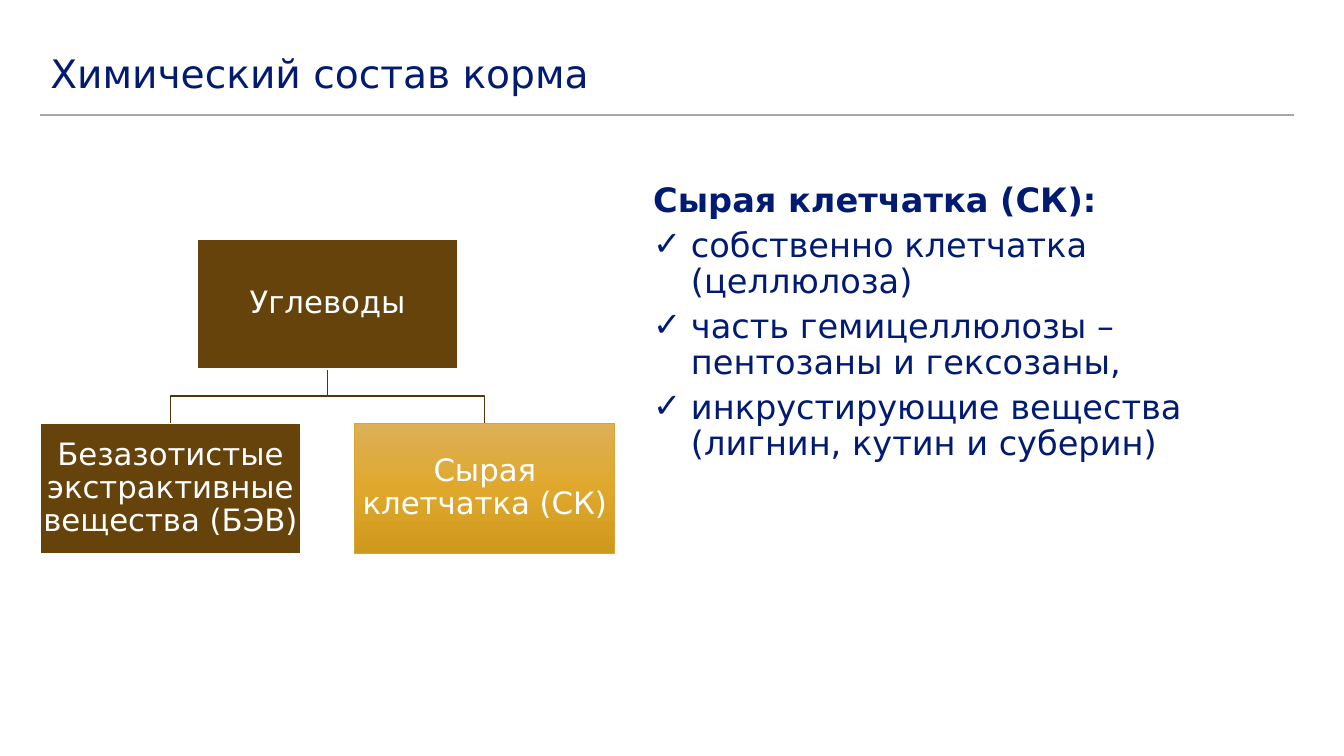
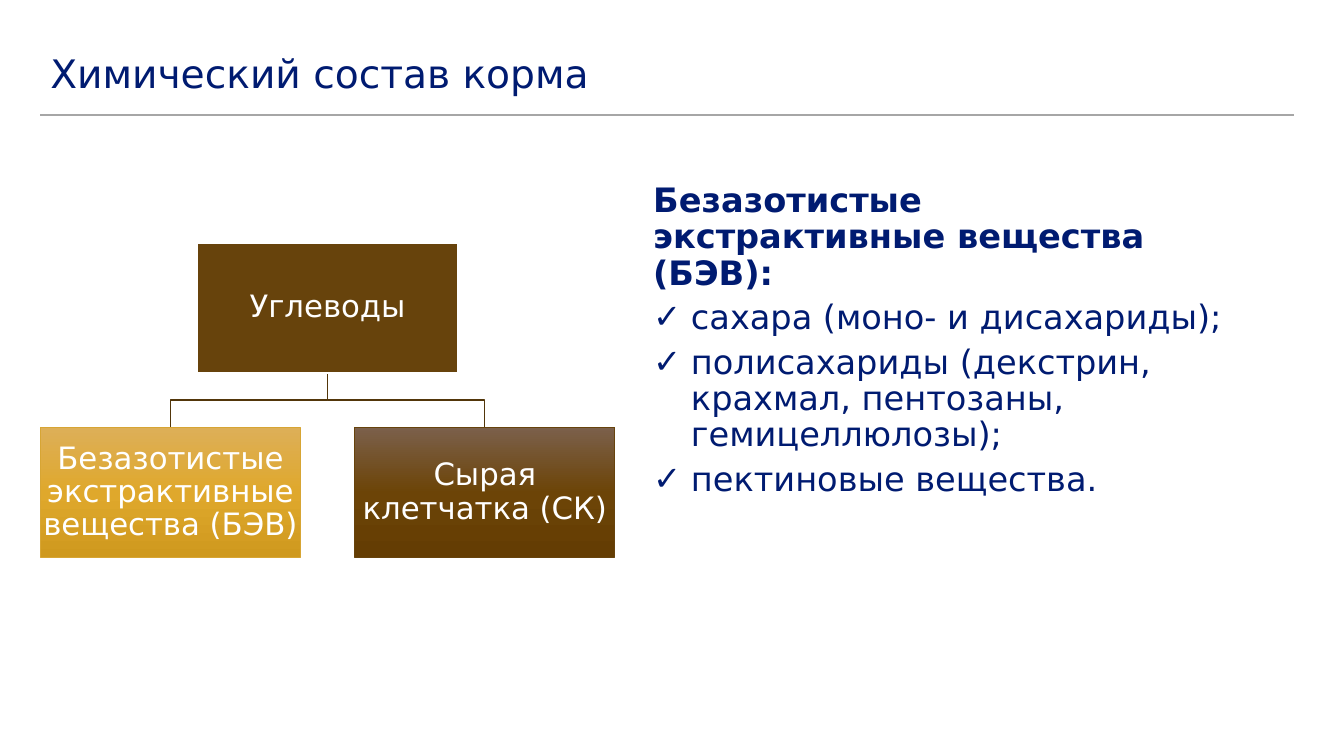
from copy import deepcopy
from lxml.etree import SubElement
from pptx import Presentation
from pptx.dml.color import RGBColor as RGB
from pptx.enum.shapes import MSO_CONNECTOR as LINK, MSO_SHAPE as SHAPE
from pptx.enum.text import MSO_ANCHOR as ANCHOR, MSO_AUTO_SIZE as AUTO, PP_ALIGN as ALIGN
from pptx.oxml.ns import qn
from pptx.util import Pt

FACE = "DejaVu Sans"
NAVY = RGB(0x00, 0x1B, 0x71)
WHITE = RGB(0xFF, 0xFF, 0xFF)
GREY = RGB(0xA6, 0xA6, 0xA6)
BROWN = RGB(0x67, 0x43, 0x0C)
DARK = RGB(0x52, 0x36, 0x0A)
GOLD = RGB(0xD7, 0xA5, 0x34)
PLAIN = ([BROWN], WHITE, 1)
AMBER = ([RGB(0xDD, 0xAF, 0x58), RGB(0xDF, 0xA8, 0x2C), RGB(0xCF, 0x99, 0x1E)], GOLD, 0.5)
COCOA = ([RGB(0x7B, 0x60, 0x4B), RGB(0x6C, 0x44, 0x07), RGB(0x64, 0x3D, 0x03)], BROWN, 0.5)

TITLE = "Химический состав корма"
ROOT = "Углеводы"
KIDS = ["Безазотистые экстрактивные вещества (БЭВ)", "Сырая клетчатка (СК)"]
SLIDES = [
    {
        "top": 170.64,
        "looks": [PLAIN, AMBER],
        "head": "Сырая клетчатка (СК):",
        "list": [
            "собственно клетчатка (целлюлоза)",
            "часть гемицеллюлозы – пентозаны и гексозаны,",
            "инкрустирующие вещества (лигнин, кутин и суберин)",
        ],
    },
    {
        "top": 173.52,
        "looks": [AMBER, COCOA],
        "head": "Безазотистые экстрактивные вещества (БЭВ):",
        "list": [
            "сахара (моно- и дисахариды);",
            "полисахариды (декстрин, крахмал, пентозаны, гемицеллюлозы);",
            "пектиновые вещества.",
        ],
    },
]

LEFT, RIGHT, RULE = 28.8, 924.48, 82.08
BOX_W, BOX_H = 185.76, 92.88
STEP, GAP = 224.64, 38.88
INDENT = 27


def write(para, text, size=24, color=NAVY, bold=False, align=ALIGN.LEFT, after=0, mark=None):
    props = para._p.get_or_add_pPr()
    inset = Pt(INDENT) if mark else 0
    props.set("marL", str(inset))
    props.set("indent", str(-inset))
    if mark:
        SubElement(props, qn("a:buChar")).set("char", mark)
    else:
        SubElement(props, qn("a:buNone"))
    para.alignment = align
    para.line_spacing = 0.9
    para.space_before = Pt(0)
    para.space_after = Pt(after)
    run = para.add_run()
    run.text = text
    run.font.name = FACE
    run.font.size = Pt(size)
    run.font.bold = bold
    run.font.color.rgb = color


def place(shape, x, y, w, h, anchor):
    shape.left, shape.top, shape.width, shape.height = Pt(x), Pt(y), Pt(w), Pt(h)
    frame = shape.text_frame
    frame.auto_size = AUTO.NONE
    frame.word_wrap = True
    frame.vertical_anchor = anchor
    return frame


def paint(shape, colors):
    fill = shape.fill
    if len(colors) == 1:
        fill.solid()
        fill.fore_color.rgb = colors[0]
        return
    fill.gradient()
    fill.gradient_angle = 270
    stops = shape._element.spPr.find(".//" + qn("a:gsLst"))
    while len(stops) < len(colors):
        stops.append(deepcopy(stops[0]))
    for i, (stop, color) in enumerate(zip(fill.gradient_stops, colors)):
        stop.color.rgb = color
        stop.position = i / (len(colors) - 1)


def add_box(slide, text, x, y, look):
    colors, edge, width = look
    box = slide.shapes.add_shape(SHAPE.RECTANGLE, Pt(x), Pt(y), Pt(BOX_W), Pt(BOX_H))
    box.shadow.inherit = False
    paint(box, colors)
    box.line.color.rgb = edge
    box.line.width = Pt(width)
    frame = place(box, x, y, BOX_W, BOX_H, ANCHOR.MIDDLE)
    frame.margin_left = frame.margin_right = Pt(1.1)
    frame.margin_top = frame.margin_bottom = Pt(1.1)
    write(frame.paragraphs[0], text, size=22, color=WHITE, align=ALIGN.CENTER)


def add_branch(slide, start, end):
    (x, y), (to_x, to_y) = start, end
    mid = (y + to_y) / 2
    pen = slide.shapes.build_freeform(Pt(x), Pt(y))
    pen.add_line_segments([(Pt(a), Pt(b)) for a, b in [(x, mid), (to_x, mid), end]], close=False)
    branch = pen.convert_to_shape()
    branch.shadow.inherit = False
    branch.fill.background()
    branch.line.color.rgb = DARK
    branch.line.width = Pt(1)


def add_tree(slide, top, looks):
    root_x = LEFT + STEP / 2
    low = top + BOX_H + GAP
    spots = [LEFT + i * STEP for i in range(len(KIDS))]
    for x in reversed(spots):
        add_branch(slide, (root_x + BOX_W / 2, top + BOX_H), (x + BOX_W / 2, low))
    add_box(slide, ROOT, root_x, top, PLAIN)
    for text, x, look in zip(KIDS, spots, looks):
        add_box(slide, text, x, low, look)


def add_frame(slide):
    rule = slide.shapes.add_connector(LINK.STRAIGHT, Pt(LEFT), Pt(RULE), Pt(RIGHT), Pt(RULE))
    rule.line.color.rgb = GREY
    rule.line.width = Pt(1)
    SubElement(rule._element.spPr, qn("a:effectLst"))
    frame = place(slide.shapes.title, LEFT, 32.4, RIGHT - LEFT, 43.2, ANCHOR.MIDDLE)
    write(frame.paragraphs[0], TITLE, size=28)


def add_list(slide, head, items):
    body = slide.placeholders[1]
    paint(body, [WHITE])
    frame = place(body, 459.36, 127.44, 422.64, 339.84, ANCHOR.TOP)
    write(frame.paragraphs[0], head, bold=True, after=6)
    for item in items:
        write(frame.add_paragraph(), item, after=6, mark="✓")


def main():
    deck = Presentation()
    deck.slide_width, deck.slide_height = Pt(960), Pt(540)
    for data in SLIDES:
        slide = deck.slides.add_slide(deck.slide_layouts[1])
        add_frame(slide)
        add_tree(slide, data["top"], data["looks"])
        add_list(slide, data["head"], data["list"])
    deck.save("out.pptx")


if __name__ == "__main__":
    main()
